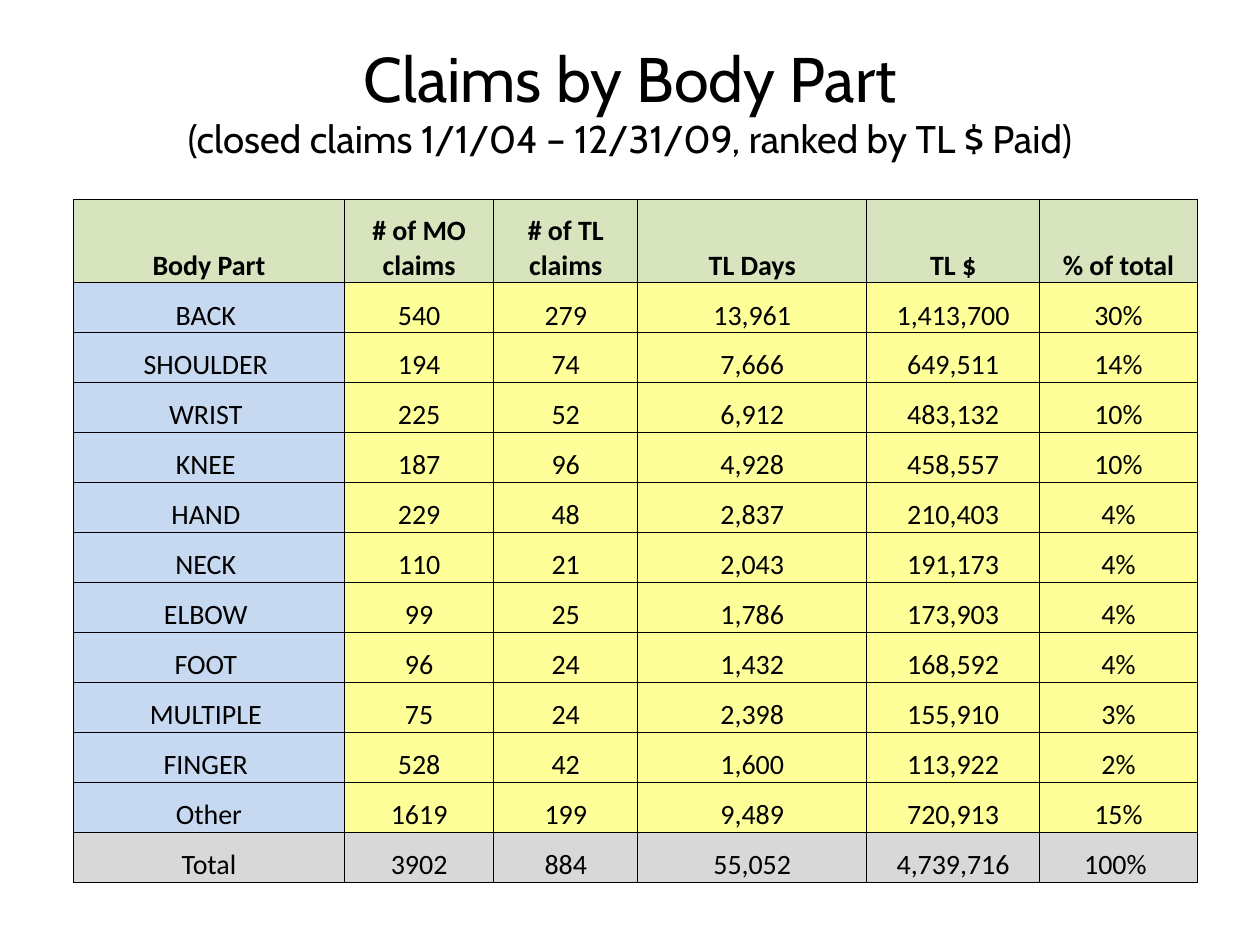
from lxml.etree import SubElement
from pptx import Presentation
from pptx.dml.color import RGBColor
from pptx.enum.text import MSO_ANCHOR as Anchor, MSO_AUTO_SIZE as AutoSize, PP_ALIGN as Align
from pptx.oxml.ns import qn
from pptx.util import Pt

BLACK = "000000"
HEADER_GREEN = "D7E4BD"
LABEL_BLUE = "C6D9F1"
VALUE_YELLOW = "FFFF99"
TOTAL_GRAY = "D8D8D8"

COLUMN_WIDTHS = [154.8, 85.4, 82.2, 131, 98.6, 90.4]
HEADER_HEIGHT = 47.5
ROW_HEIGHT = 28.56

CLAIMS = [
    ["Body Part", "# of MO claims", "# of TL claims", "TL Days", "TL $", "% of total"],
    ["BACK ", "540", "279", "13,961", "1,413,700", "30%"],
    ["SHOULDER ", "194", "74", "7,666", "649,511", "14%"],
    ["WRIST ", "225", "52", "6,912", "483,132", "10%"],
    ["KNEE ", "187", "96", "4,928", "458,557", "10%"],
    ["HAND ", "229", "48", "2,837", "210,403", "4%"],
    ["NECK ", "110", "21", "2,043", "191,173", "4%"],
    ["ELBOW ", "99", "25", "1,786", "173,903", "4%"],
    ["FOOT ", "96", "24", "1,432", "168,592", "4%"],
    ["MULTIPLE ", "75", "24", "2,398", "155,910", "3%"],
    ["FINGER ", "528", "42", "1,600", "113,922", "2%"],
    ["Other", "1619", "199", "9,489", "720,913", "15%"],
    ["Total", "3902", "884", "55,052", "4,739,716", "100% "],
]


def color(hex_string):
    return RGBColor.from_string(hex_string)


def write_text(paragraph, text, *, font, size, bold=False):
    paragraph.alignment = Align.CENTER
    paragraph.space_before = Pt(0)
    run = paragraph.add_run()
    run.text = text
    run.font.name = font
    run.font.size = Pt(size)
    run.font.bold = bold
    run.font.color.rgb = color(BLACK)


def add_borders(cell, width=0.5):
    """Put the four border lines ahead of the fill, as the schema requires."""
    properties = cell._tc.get_or_add_tcPr()
    for position, side in enumerate(("lnL", "lnR", "lnT", "lnB")):
        line = SubElement(properties, qn(f"a:{side}"), w=str(Pt(width)))
        fill = SubElement(line, qn("a:solidFill"))
        SubElement(fill, qn("a:srgbClr"), val=BLACK)
        properties.insert(position, line)


def add_title(slide):
    title = slide.shapes.title
    title.left, title.top, title.width, title.height = Pt(36), Pt(12.24), Pt(648), Pt(90)
    frame = title.text_frame
    frame.word_wrap = True
    frame.auto_size = AutoSize.NONE
    frame.vertical_anchor = Anchor.MIDDLE
    write_text(frame.paragraphs[0], "Claims by Body Part", font="Cabin", size=36)
    write_text(frame.add_paragraph(), "(closed claims 1/1/04 – 12/31/09, ranked by TL $ Paid)",
               font="Cabin", size=22)


def cell_fill(row, column):
    if row == 0:
        return HEADER_GREEN
    if row == len(CLAIMS) - 1:
        return TOTAL_GRAY
    return LABEL_BLUE if column == 0 else VALUE_YELLOW


def format_cell(cell, text, *, fill, bold):
    cell.margin_left = cell.margin_right = cell.margin_top = cell.margin_bottom = 0
    cell.vertical_anchor = Anchor.BOTTOM
    cell.fill.solid()
    cell.fill.fore_color.rgb = color(fill)
    add_borders(cell)
    write_text(cell.text_frame.paragraphs[0], text, font="Calibri", size=16, bold=bold)


def add_claims_table(slide):
    heights = [HEADER_HEIGHT] + [ROW_HEIGHT] * (len(CLAIMS) - 1)
    table = slide.shapes.add_table(
        len(CLAIMS), len(COLUMN_WIDTHS), Pt(42), Pt(114),
        Pt(sum(COLUMN_WIDTHS)), Pt(sum(heights))).table
    table.horz_banding = False
    for column, width in zip(table.columns, COLUMN_WIDTHS):
        column.width = Pt(width)
    for row, height in zip(table.rows, heights):
        row.height = Pt(height)
    for row, texts in enumerate(CLAIMS):
        for column, text in enumerate(texts):
            format_cell(table.cell(row, column), text,
                        fill=cell_fill(row, column), bold=row == 0)


def main():
    presentation = Presentation()
    presentation.slide_width, presentation.slide_height = Pt(720), Pt(540)
    slide = presentation.slides.add_slide(presentation.slide_layouts[5])
    add_claims_table(slide)
    add_title(slide)
    presentation.save("out.pptx")


if __name__ == "__main__":
    main()
